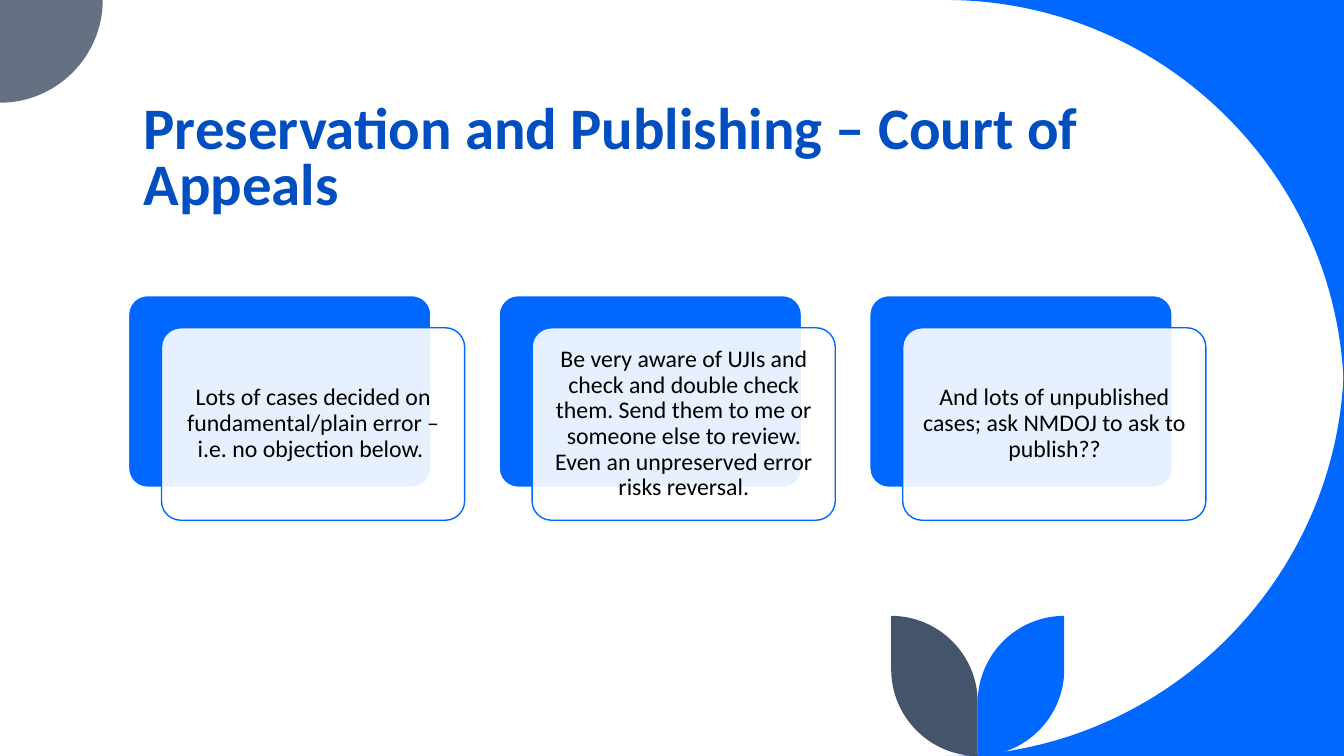
from lxml import etree
from pptx import Presentation
from pptx.dml.color import RGBColor
from pptx.enum.shapes import MSO_SHAPE
from pptx.enum.text import MSO_ANCHOR, PP_ALIGN
from pptx.oxml.ns import qn
from pptx.util import Cm, Pt

ROUNDED = MSO_SHAPE.ROUNDED_RECTANGLE
MIDDLE = MSO_ANCHOR.MIDDLE
BOTTOM = MSO_ANCHOR.BOTTOM
CENTER = PP_ALIGN.CENTER
LEFT = PP_ALIGN.LEFT

COLORS = {
    "blue": "0068FF",
    "title": "004EBF",
    "gray": "637183",
    "slate": "44546A",
    "white": "FFFFFF",
    "black": "000000",
}
FONT = "Calibri"
ROUNDNESS = 0.55
SLIDE_WIDTH, SLIDE_HEIGHT = 33.87, 19.05
SWOOP_RADIUS = 10.04
CORNER_RADIUS = 2.59
LEAF_STEM, LEAF_TOP, LEAF_RADIUS = 24.64, 15.52, 2.18
CARD_LEFT, CARD_TOP, CARD_PITCH = 3.23, 7.44, 9.34
CARD_WIDTH, CARD_HEIGHT = 7.64, 4.85
FRONT_SHIFT_X, FRONT_SHIFT_Y = 0.84, 0.82
TEXT_SHIFT_X, TEXT_SHIFT_Y = 0.98, 0.96
TEXT_WIDTH, TEXT_HEIGHT, TEXT_MARGIN = 7.37, 4.57, 0.18

TITLE = "Preservation and Publishing – Court of Appeals"
CARDS = [
    "Lots of cases decided on fundamental/plain error – i.e. no objection below. ",
    "Be very aware of UJIs and check and double check them. Send them to me or "
    "someone else to review. Even an unpreserved error risks reversal.",
    "And lots of unpublished cases; ask NMDOJ to ask to publish??",
]


def rgb(name):
    return RGBColor.from_string(COLORS[name])


def toward(point, corner):
    return tuple(p + (c - p) * ROUNDNESS for p, c in zip(point, corner))


def quarter(start, corner, end):
    return [toward(start, corner), toward(end, corner), end]


def bend_segments(shape, segments):
    lines = list(shape._element.iter(qn("a:lnTo")))
    for segment in segments:
        current, lines = lines[:len(segment)], lines[len(segment):]
        if len(segment) == 3:
            curve = etree.Element(qn("a:cubicBezTo"))
            current[0].addprevious(curve)
            for line in current:
                curve.append(line[0])
                line.getparent().remove(line)


def add_outline(slide, start, segments, color):
    points = [(Cm(x), Cm(y)) for segment in segments for x, y in segment]
    builder = slide.shapes.build_freeform(Cm(start[0]), Cm(start[1]), scale=1.0)
    builder.add_line_segments(points, close=True)
    shape = builder.convert_to_shape()
    bend_segments(shape, segments)
    shape.shadow.inherit = False
    shape.fill.solid()
    shape.fill.fore_color.rgb = rgb(color)
    shape.line.fill.background()


def add_swoop(slide, edge, direction):
    start = (SLIDE_WIDTH - SWOOP_RADIUS, edge)
    corner = (SLIDE_WIDTH, edge)
    end = (SLIDE_WIDTH, edge + direction * SWOOP_RADIUS)
    add_outline(slide, start, [quarter(start, corner, end), [corner]], "blue")


def add_corner(slide):
    right, bottom = (CORNER_RADIUS, 0), (0, CORNER_RADIUS)
    curve = quarter(right, (CORNER_RADIUS, CORNER_RADIUS), bottom)
    add_outline(slide, (0, 0), [[right], curve], "gray")


def add_leaf(slide, direction, color):
    side = LEAF_STEM + direction * LEAF_RADIUS
    tip = (side, LEAF_TOP)
    shoulder = (side, SLIDE_HEIGHT - LEAF_RADIUS)
    foot = (LEAF_STEM, SLIDE_HEIGHT)
    waist = (LEAF_STEM, LEAF_TOP + LEAF_RADIUS)
    add_outline(slide, tip, [
        [shoulder],
        quarter(shoulder, (side, SLIDE_HEIGHT), foot),
        [waist],
        quarter(waist, (LEAF_STEM, LEAF_TOP), tip),
    ], color)


def add_text(slide, box, text, size, color, anchor, alignment, spacing,
             bold=False, margin=None):
    shape = slide.shapes.add_textbox(*[Cm(length) for length in box])
    frame = shape.text_frame
    frame.word_wrap = True
    frame.vertical_anchor = anchor
    if margin is not None:
        frame.margin_left = frame.margin_right = Cm(margin)
        frame.margin_top = frame.margin_bottom = Cm(margin)
    paragraph = frame.paragraphs[0]
    paragraph.alignment = alignment
    paragraph.line_spacing = spacing
    run = paragraph.add_run()
    run.text = text
    run.font.name = FONT
    run.font.size = Pt(size)
    run.font.bold = bold
    run.font.color.rgb = rgb(color)


def add_panel(slide, left, top, fill, line, line_width):
    shape = slide.shapes.add_shape(
        ROUNDED, Cm(left), Cm(top), Cm(CARD_WIDTH), Cm(CARD_HEIGHT))
    shape.adjustments[0] = 0.1
    shape.shadow.inherit = False
    shape.fill.solid()
    shape.fill.fore_color.rgb = rgb(fill)
    shape.line.color.rgb = rgb(line)
    shape.line.width = Pt(line_width)
    return shape


def set_opacity(shape, percent):
    color = shape._element.spPr.find(qn("a:solidFill"))[0]
    etree.SubElement(color, qn("a:alpha"), val=str(percent * 1000))


def add_card(slide, left, text):
    add_panel(slide, left, CARD_TOP, "blue", "white", 1.5)
    front = add_panel(slide, left + FRONT_SHIFT_X, CARD_TOP + FRONT_SHIFT_Y,
                      "white", "blue", 1)
    set_opacity(front, 90)
    box = (left + TEXT_SHIFT_X, CARD_TOP + TEXT_SHIFT_Y, TEXT_WIDTH, TEXT_HEIGHT)
    add_text(slide, box, text, 17, "black", MIDDLE, CENTER, 0.9, margin=TEXT_MARGIN)


def main():
    presentation = Presentation()
    presentation.slide_width = Cm(SLIDE_WIDTH)
    presentation.slide_height = Cm(SLIDE_HEIGHT)
    slide = presentation.slides.add_slide(presentation.slide_layouts[6])
    add_swoop(slide, 0, 1)
    add_swoop(slide, SLIDE_HEIGHT, -1)
    add_corner(slide)
    add_leaf(slide, 1, "blue")
    add_leaf(slide, -1, "slate")
    add_text(slide, (3.37, 0.29, 27.15, 5.31), TITLE, 42, "title", BOTTOM, LEFT,
             0.8, bold=True)
    for index, text in enumerate(CARDS):
        add_card(slide, CARD_LEFT + index * CARD_PITCH, text)
    presentation.save("out.pptx")


if __name__ == "__main__":
    main()
